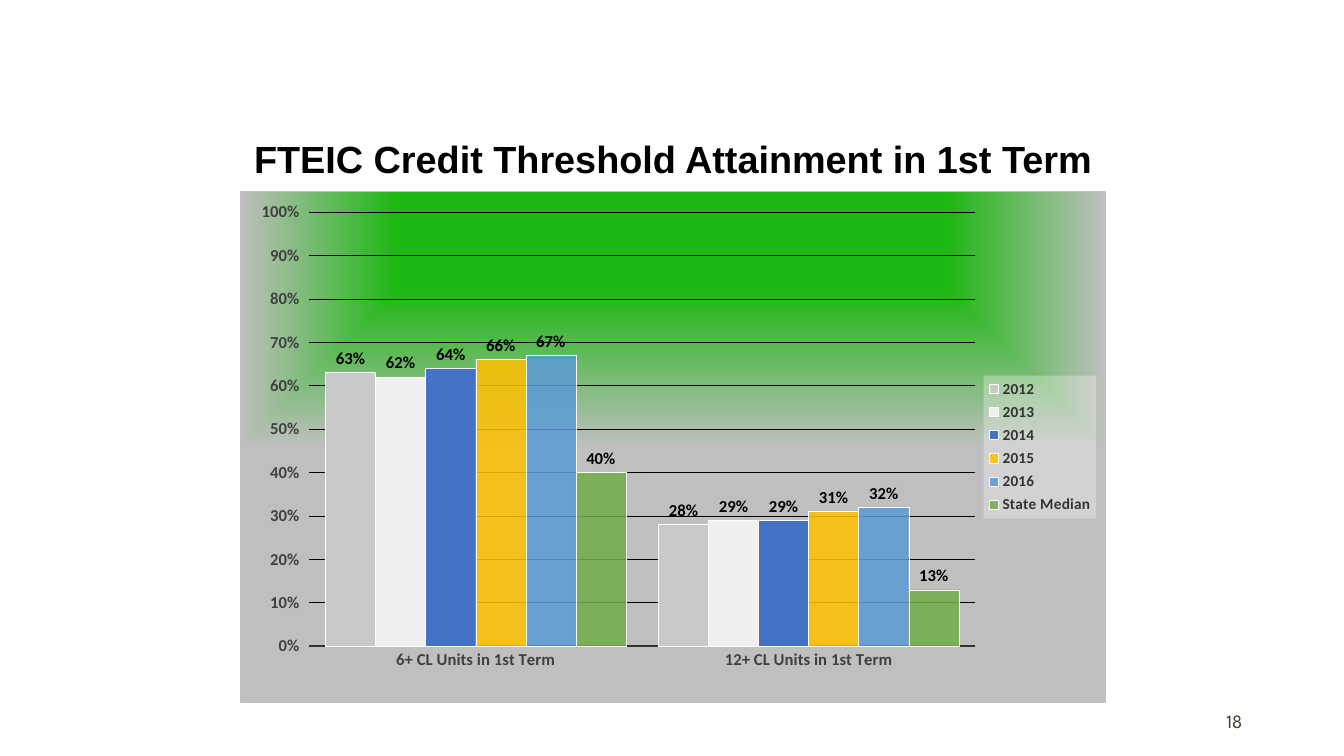
import pptx
import pptx.chart.data
import pptx.dml.color
import pptx.enum.chart
import pptx.enum.text
import pptx.oxml
import pptx.oxml.ns
import pptx.util

Inches = pptx.util.Inches
Pt = pptx.util.Pt
qn = pptx.oxml.ns.qn
NS = pptx.oxml.ns.nsdecls("a", "c")

CATS = ["6+ CL Units in 1st Term", "12+ CL Units in 1st Term"]
SERIES = [
    ("2012", (0.63, 0.28), "C9C9C9", 100, 12),
    ("2013", (0.62, 0.29), "F1F0F0", 100, 12),
    ("2014", (0.64, 0.29), "4472C4", 100, 12),
    ("2015", (0.66, 0.31), "FFC000", 85, 12),
    ("2016", (0.67, 0.32), "5B9BD5", 85, 11.9),
    ("State Median", (0.4, 0.13), "70AD47", 85, 11.9),
]
STOPS = [(0, "1FB714"), (39, "1FB714"), (100, "BFBFBF")]


def color(text):
    return pptx.dml.color.RGBColor.from_string(text)


class Deck:
    """Holds the style and the current slide, and adds each kind of element."""

    face = "Calibri"

    def __init__(self):
        self.prs = pptx.Presentation()
        self.prs.slide_width = Inches(13.33)
        self.prs.slide_height = Inches(7.5)
        self.slide = self.prs.slides.add_slide(self.prs.slide_layouts[5])

    def style(self, font, size, hue, bold=True, face=None):
        font.name = face or self.face
        font.size = Pt(size)
        font.bold = bold
        font.color.rgb = color(hue)

    def stroke(self, line, hue, width):
        line.color.rgb = color(hue)
        line.width = Pt(width)

    def label(self, frame, text, align, *look):
        frame.word_wrap = True
        frame.vertical_anchor = pptx.enum.text.MSO_ANCHOR.MIDDLE
        para = frame.paragraphs[0]
        para.alignment = align
        run = para.add_run()
        run.text = text
        self.style(run.font, *look)
        return para

    def title(self, text, box):
        shape = self.slide.shapes.title
        shape.left, shape.top, shape.width, shape.height = map(Inches, box)
        para = self.label(shape.text_frame, text, pptx.enum.text.PP_ALIGN.LEFT,
                          27, "000000", True, "Arial")
        para.line_spacing = 0.9

    def number(self, text, box):
        shape = self.slide.shapes.add_textbox(*map(Inches, box))
        self.label(shape.text_frame, text, pptx.enum.text.PP_ALIGN.RIGHT,
                   13.5, "443C29", False, "League Spartan")

    def place(self, owner, index, box, inner=""):
        for old in owner.findall(qn("c:layout")):
            owner.remove(old)
        modes = "".join(f'<c:{k}Mode val="edge"/>' for k in "xy")
        sizes = "".join(f'<c:{k} val="{v}"/>' for k, v in zip("xywh", box))
        owner.insert(index, pptx.oxml.parse_xml(
            f"<c:layout {NS}><c:manualLayout>{inner}{modes}{sizes}"
            "</c:manualLayout></c:layout>"))

    def back(self, chart):
        stops = "".join(
            f'<a:gs pos="{at * 1000}"><a:srgbClr val="{hue}"/></a:gs>'
            for at, hue in STOPS)
        chart.element.find(qn("c:chart")).addnext(pptx.oxml.parse_xml(
            f'<c:spPr {NS}><a:gradFill rotWithShape="0"><a:gsLst>{stops}</a:gsLst>'
            '<a:path path="rect"><a:fillToRect l="50000" t="-80000" r="50000" '
            'b="180000"/></a:path></a:gradFill><a:ln w="3175"><a:solidFill>'
            '<a:srgbClr val="C0C0C0"/></a:solidFill></a:ln></c:spPr>'))

    def legend(self, chart):
        chart.has_legend = True
        chart.legend.position = pptx.enum.chart.XL_LEGEND_POSITION.RIGHT
        chart.legend.include_in_layout = False
        self.style(chart.legend.font, 10.9, "333333")
        node = chart.element.find(".//" + qn("c:legend"))
        self.place(node, 1, (0.86, 0.36, 0.13, 0.28))
        node.find(qn("c:overlay")).addnext(pptx.oxml.parse_xml(
            f'<c:spPr {NS}><a:solidFill><a:srgbClr val="FFFFFF">'
            '<a:alpha val="30000"/></a:srgbClr></a:solidFill></c:spPr>'))

    def axes(self, chart):
        tick = pptx.enum.chart.XL_TICK_MARK
        cat, val = chart.category_axis, chart.value_axis
        for axis in (cat, val):
            self.style(axis.tick_labels.font, 11.9, "404040")
            axis.minor_tick_mark = tick.NONE
        cat.major_tick_mark = tick.NONE
        self.stroke(cat.format.line, "333333", 1)
        val.major_tick_mark = tick.OUTSIDE
        val.format.line.fill.background()
        val.minimum_scale, val.maximum_scale, val.major_unit = 0, 1, 0.1
        val.tick_labels.number_format = "0%"
        val.tick_labels.number_format_is_linked = False
        self.stroke(val.major_gridlines.format.line, "000000", 0.25)

    def bars(self, series, hue, alpha, size):
        fill = series.format.fill
        fill.solid()
        fill.fore_color.rgb = color(hue)
        if alpha < 100:
            node = series._element.find(qn("c:spPr")).find(".//" + qn("a:srgbClr"))
            node.append(pptx.oxml.parse_xml(
                f'<a:alpha {NS} val="{alpha * 1000}"/>'))
        self.stroke(series.format.line, "FFFFFF", 0.25)
        labels = series.data_labels
        labels.show_value = True
        labels.position = pptx.enum.chart.XL_LABEL_POSITION.OUTSIDE_END
        labels.number_format = "0%"
        labels.number_format_is_linked = False
        self.style(labels.font, size, "000000")

    def chart(self, box):
        data = pptx.chart.data.CategoryChartData(number_format="0%")
        data.categories = CATS
        for name, vals, *_ in SERIES:
            data.add_series(name, vals)
        kind = pptx.enum.chart.XL_CHART_TYPE.COLUMN_CLUSTERED
        chart = self.slide.shapes.add_chart(kind, *map(Inches, box), data).chart
        chart.has_title = False
        self.style(chart.font, 10, "000000", False)
        plot = chart.plots[0]
        plot.gap_width, plot.overlap = 65, 0
        plot.vary_by_categories = False
        for series, (_, _, *look) in zip(plot.series, SERIES):
            self.bars(series, *look)
        self.axes(chart)
        self.legend(chart)
        self.back(chart)
        self.place(chart.element.find(".//" + qn("c:plotArea")), 0,
                   (0.08, 0.04, 0.77, 0.85), '<c:layoutTarget val="inner"/>')


def main():
    deck = Deck()
    deck.title("FTEIC Credit Threshold Attainment in 1st Term",
               (2.42, 1.25, 9.04, 0.69))
    deck.number("18", (9.42, 6.95, 3, 0.4))
    deck.chart((2.38, 1.9, 8.58, 5.07))
    deck.prs.save("out.pptx")


if __name__ == "__main__":
    main()
